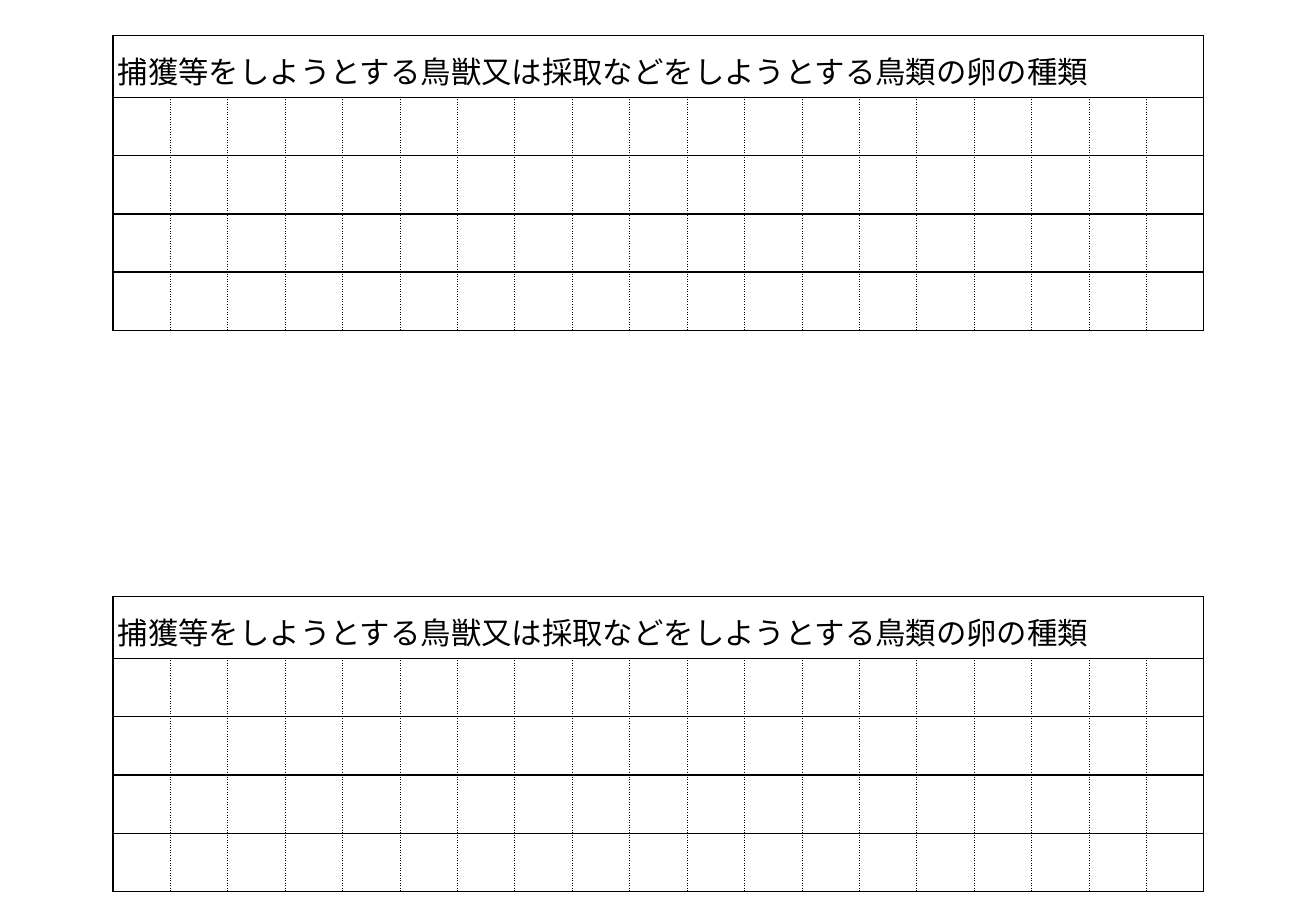
from dataclasses import dataclass

from lxml import etree
from pptx import Presentation
from pptx.dml.color import RGBColor
from pptx.enum.text import MSO_ANCHOR
from pptx.oxml.ns import qn
from pptx.util import Inches, Pt

MIDDLE = MSO_ANCHOR.MIDDLE


@dataclass(frozen=True)
class Theme:
    ink: str = "000000"
    font: str = "Noto Sans CJK JP"
    heading_size: float = 18


@dataclass(frozen=True)
class Border:
    width: float
    dash: str


@dataclass(frozen=True)
class EntryGrid:
    heading: str
    top: float
    left: float = 0.93
    width: float = 8.98
    columns: int = 19
    entry_rows: int = 4
    heading_height: float = 0.47
    entry_height: float = 0.48


THEME = Theme()
SOLID = Border(1, "solid")
DOTTED = Border(0.5, "sysDot")
HEADING = "捕獲等をしようとする鳥獣又は採取などをしようとする鳥類の卵の種類"
GRIDS = [EntryGrid(HEADING, top) for top in (0.29, 4.91)]


def set_borders(cell, left: Border, right: Border) -> None:
    properties = cell._tc.get_or_add_tcPr()
    sides = {"a:lnL": left, "a:lnR": right, "a:lnT": SOLID, "a:lnB": SOLID}
    for position, (tag, border) in enumerate(sides.items()):
        line = etree.Element(qn(tag), w=str(Pt(border.width)))
        fill = etree.SubElement(line, qn("a:solidFill"))
        etree.SubElement(fill, qn("a:srgbClr"), val=THEME.ink)
        etree.SubElement(line, qn("a:prstDash"), val=border.dash)
        properties.insert(position, line)


def write_text(cell, text: str, *, size: float, font: str, color: str,
               line_spacing: float, space_after: float) -> None:
    para = cell.text_frame.paragraphs[0]
    para.line_spacing = line_spacing
    para.space_after = Pt(space_after)
    span = para.add_run()
    span.text = text
    span.font.size = Pt(size)
    span.font.name = font
    span.font.color.rgb = RGBColor.from_string(color)
    properties = span.font._element
    etree.SubElement(properties, qn("a:ea"), typeface=font)


def draw_grid(page, grid: EntryGrid) -> None:
    height = grid.heading_height + grid.entry_rows * grid.entry_height
    table = page.shapes.add_table(
        grid.entry_rows + 1, grid.columns, Inches(grid.left),
        Inches(grid.top), Inches(grid.width), Inches(height)).table
    table.first_row = False
    table.horz_banding = False
    for column in table.columns:
        column.width = Inches(grid.width / grid.columns)
    for index, row in enumerate(table.rows):
        row.height = Inches(grid.entry_height if index else grid.heading_height)
        for place, cell in enumerate(row.cells):
            cell.fill.background()
            cell.vertical_anchor = MIDDLE
            cell.margin_left = cell.margin_right = Inches(0.04)
            cell.margin_top = cell.margin_bottom = Inches(0.04)
            is_first, is_last = place == 0, place == grid.columns - 1
            set_borders(cell,
                        left=SOLID if is_first or index == 0 else DOTTED,
                        right=SOLID if is_last or index == 0 else DOTTED)
    heading = table.cell(0, 0)
    heading.merge(table.cell(0, grid.columns - 1))
    write_text(heading, grid.heading, size=THEME.heading_size, font=THEME.font,
               color=THEME.ink, line_spacing=1.19, space_after=6)


def main() -> None:
    deck = Presentation()
    deck.slide_width = Inches(10.83)
    deck.slide_height = Inches(7.5)
    page = deck.slides.add_slide(deck.slide_layouts[6])
    for grid in GRIDS:
        draw_grid(page, grid)
    deck.save("out.pptx")


if __name__ == "__main__":
    main()
